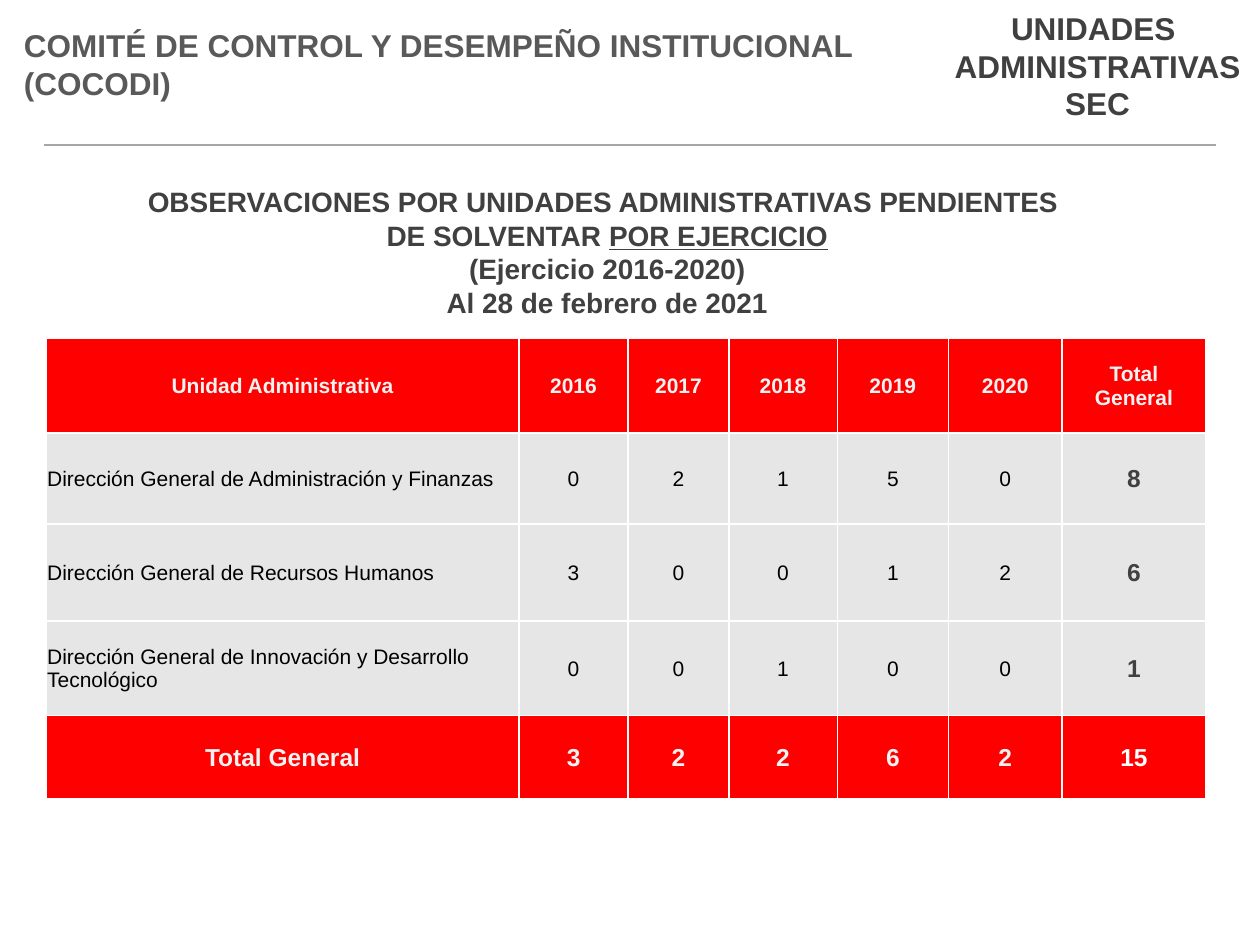
import pptx
import pptx.dml.color
import pptx.enum.shapes
import pptx.enum.text
import pptx.oxml
import pptx.oxml.ns
import pptx.util

Pt = pptx.util.Pt
ALIGN = pptx.enum.text.PP_ALIGN
ANCHOR = pptx.enum.text.MSO_ANCHOR

RED, GRAY, WHITE = "FF0000", "E7E6E6", "FFFFFF"
DARK, MEDIUM, PALE, BLACK = "404040", "595959", "F2F2F2", "000000"

COLUMN_WIDTHS = [270, 62.5, 57.5, 62, 63.5, 65, 82]
ROW_HEIGHTS = [54, 52, 55.5, 54, 47.5]
OBSERVATIONS = [
    ["Unidad Administrativa", "2016", "2017", "2018", "2019", "2020", "Total\vGeneral"],
    ["Dirección General de Administración y Finanzas", 0, 2, 1, 5, 0, 8],
    ["Dirección General de Recursos Humanos", 3, 0, 0, 1, 2, 6],
    ["Dirección General de Innovación y Desarrollo Tecnológico", 0, 0, 1, 0, 0, 1],
    ["Total General", 3, 2, 2, 6, 2, 15],
]


def rgb(hex_color):
    return pptx.dml.color.RGBColor.from_string(hex_color)


def apply(target, settings):
    for name, value in settings.items():
        setattr(target, name, value)


def write_paragraph(paragraph, runs, size, color, bold=True, align=ALIGN.CENTER):
    """Write (text, underlined) runs in one style."""
    paragraph.alignment = align
    for text, underlined in runs:
        run = paragraph.add_run()
        run.text = text
        apply(run.font, {"name": "Arial", "size": Pt(size), "bold": bold,
                         "underline": underlined})
        run.font.color.rgb = rgb(color)


def write_block(shape, box, lines, size, color, align=ALIGN.CENTER):
    """Place a text shape in its box and write one paragraph per line."""
    apply(shape, dict(zip(("left", "top", "width", "height"), map(Pt, box))))
    frame = shape.text_frame
    apply(frame, {"word_wrap": True, "vertical_anchor": ANCHOR.TOP,
                  "auto_size": pptx.enum.text.MSO_AUTO_SIZE.NONE})
    for index, runs in enumerate(lines):
        paragraph = frame.add_paragraph() if index else frame.paragraphs[0]
        write_paragraph(paragraph, runs, size, color, align=align)


def add_header(slide, left, top, width):
    # Committee name
    write_block(slide.shapes.title, (left + 6.5, top + 11.5, 505.5, 51),
                [[("COMITÉ DE CONTROL Y DESEMPEÑO INSTITUCIONAL (COCODI)", False)]],
                18, MEDIUM, ALIGN.LEFT)
    # Area name, at the right edge
    area = slide.shapes.add_textbox(0, 0, 0, 0)
    write_block(area, (left + width - 187, top + 1.5, 188.5, 72.5),
                [[("UNIDADES ", False)], [("ADMINISTRATIVAS", False)], [("SEC", False)]],
                18, DARK)
    # Rule below both
    rule_y = Pt(top + 82.8)
    rule = slide.shapes.add_connector(pptx.enum.shapes.MSO_CONNECTOR.STRAIGHT,
                                      Pt(left + 25.2), rule_y,
                                      Pt(left + width - 25.2), rule_y)
    rule.line.color.rgb = rgb("A6A6A6")
    rule.line.width = Pt(1.5)
    rule._element.spPr.append(pptx.oxml.parse_xml(
        f'<a:effectLst {pptx.oxml.ns.nsdecls("a")}/>'))


def add_subject(slide, box):
    subject = slide.shapes.add_textbox(0, 0, 0, 0)
    write_block(subject, box, [
        [("OBSERVACIONES POR UNIDADES ADMINISTRATIVAS PENDIENTES ", False)],
        [("DE SOLVENTAR ", False), ("POR EJERCICIO", True)],
        [("(Ejercicio 2016-2020)", False)],
        [("Al 28 de febrero de 2021", False)],
    ], 16, DARK)


def add_borders(cell):
    properties = cell._tc.get_or_add_tcPr()
    for side in "LRTB":
        properties.append(pptx.oxml.parse_xml(
            f'<a:ln{side} {pptx.oxml.ns.nsdecls("a")} w="{Pt(1)}"><a:solidFill>'
            f'<a:srgbClr val="{WHITE}"/></a:solidFill></a:ln{side}>'))


def cell_style(row, column):
    """Return the text style of a cell from its role in the table."""
    last_row, last_column = len(ROW_HEIGHTS) - 1, len(COLUMN_WIDTHS) - 1
    if row == 0:
        return {"size": 12, "color": PALE}
    if row == last_row:
        return {"size": 14, "color": WHITE if column == last_column else PALE}
    if column == last_column:
        return {"size": 14, "color": DARK}
    return {"size": 12, "color": BLACK, "bold": False,
            "align": ALIGN.CENTER if column else ALIGN.LEFT}


def add_observations_table(slide, left, top):
    table = slide.shapes.add_table(
        len(ROW_HEIGHTS), len(COLUMN_WIDTHS), Pt(left), Pt(top),
        Pt(sum(COLUMN_WIDTHS)), Pt(sum(ROW_HEIGHTS))).table
    for column, width in zip(table.columns, COLUMN_WIDTHS):
        column.width = Pt(width)
    for row, height in zip(table.rows, ROW_HEIGHTS):
        row.height = Pt(height)

    for row, values in enumerate(OBSERVATIONS):
        for column, value in enumerate(values):
            cell = table.cell(row, column)
            apply(cell, {"vertical_anchor": ANCHOR.MIDDLE, "margin_left": Pt(0.5),
                         "margin_right": Pt(0.5), "margin_top": Pt(0.5),
                         "margin_bottom": 0})
            add_borders(cell)
            cell.fill.solid()
            cell.fill.fore_color.rgb = rgb(RED if row in (0, len(OBSERVATIONS) - 1) else GRAY)
            paragraph = cell.text_frame.paragraphs[0]
            for index, line in enumerate(str(value).split("\v")):
                if index:
                    paragraph.add_line_break()
                write_paragraph(paragraph, [(line, False)], **cell_style(row, column))


def main():
    presentation = pptx.Presentation()
    apply(presentation, {"slide_width": Pt(720), "slide_height": Pt(540)})
    slide = presentation.slides.add_slide(presentation.slide_layouts[5])
    add_header(slide, 0, 0, 720)
    add_subject(slide, (67.5, 102, 559, 85))
    add_observations_table(slide, 26.5, 193.5)
    presentation.save("out.pptx")


if __name__ == "__main__":
    main()
